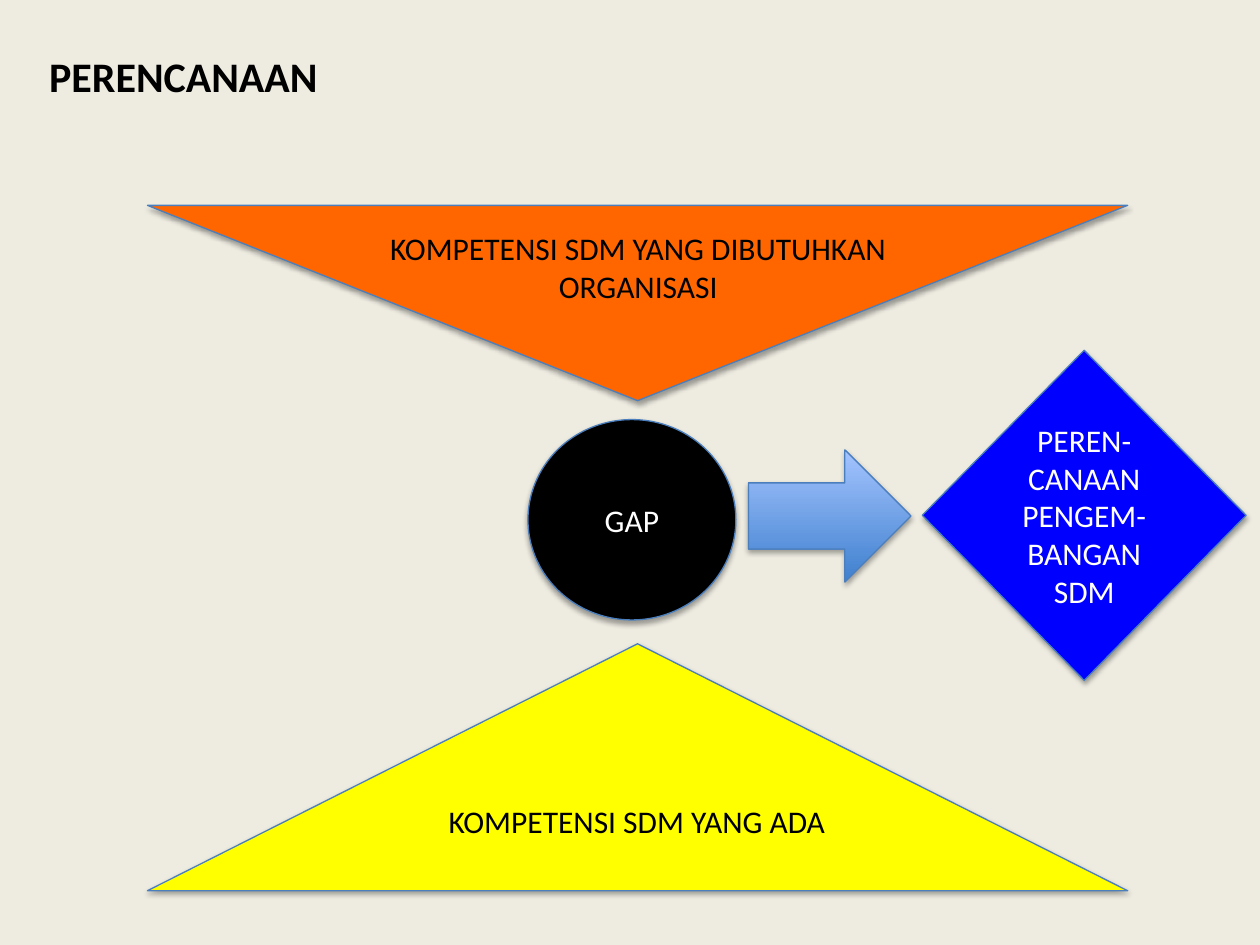
import pptx
import pptx.util
import pptx.dml.color
import pptx.enum.shapes
import pptx.enum.text
import pptx.oxml
import pptx.oxml.ns

Inches, Pt = pptx.util.Inches, pptx.util.Pt
MSO = pptx.enum.shapes.MSO_SHAPE
ALIGN = pptx.enum.text.PP_ALIGN
ANCHOR = pptx.enum.text.MSO_ANCHOR
rgb = pptx.dml.color.RGBColor.from_string

SHADOW = (
    f'<a:effectLst {pptx.oxml.ns.nsdecls("a")}>'
    f'<a:outerShdw blurRad="{Pt(3.1)}" dist="{Pt(1.8)}" dir="5400000" rotWithShape="0">'
    '<a:srgbClr val="000000"><a:alpha val="35000"/></a:srgbClr>'
    '</a:outerShdw></a:effectLst>'
)


def write(sp, text, size=18, color="000000", bold=False, align=ALIGN.CENTER, anchor=ANCHOR.TOP):
    tf = sp.text_frame
    tf.word_wrap = True
    tf.vertical_anchor = anchor
    p = tf.paragraphs[0]
    p.alignment = align
    r = p.add_run()
    r.text = text
    r.font.name = "Calibri"
    r.font.size = Pt(size)
    r.font.bold = bold
    r.font.color.rgb = rgb(color)


def add_figure(kind, box, fill=None):
    sp = s.shapes.add_shape(kind, *map(Inches, box))
    if fill:
        sp.fill.solid()
        sp.fill.fore_color.rgb = rgb(fill)
    sp.line.color.rgb = rgb("4B7EBC")
    sp.line.width = Pt(0.75)
    sp._element.spPr.append(pptx.oxml.parse_xml(SHADOW))
    return sp


prs = pptx.Presentation()
prs.slide_width, prs.slide_height = Inches(10), Inches(7.5)
s = prs.slides.add_slide(prs.slide_layouts[5])
s.background.fill.solid()
s.background.fill.fore_color.rgb = rgb("EEECE1")

# Title
title = s.shapes.title
title.left, title.top, title.width, title.height = map(Inches, (0.29, 0.35, 9.44, 0.5))
write(title, "PERENCANAAN", size=24, bold=True, align=ALIGN.LEFT)

# Gap between the two triangles
gap = add_figure(MSO.OVAL, (4.19, 3.33, 1.65, 1.59), "000000")
write(gap, "GAP", color="FFFFFF", anchor=ANCHOR.MIDDLE)

# Available and required competence
add_figure(MSO.ISOSCELES_TRIANGLE, (1.17, 5.11, 7.78, 1.96), "FFFF00")
required = add_figure(MSO.ISOSCELES_TRIANGLE, (1.17, 1.63, 7.78, 1.55), "FF6600")
required.rotation = 180

# Triangle labels
for text, box in (
    ("KOMPETENSI SDM YANG DIBUTUHKAN ORGANISASI", (2.59, 1.77, 4.95, 0.71)),
    ("KOMPETENSI SDM YANG ADA", (2.44, 6.32, 5.23, 0.4)),
):
    write(s.shapes.add_textbox(*map(Inches, box)), text)

# Arrow from the gap to the plan
arrow = add_figure(MSO.RIGHT_ARROW, (5.94, 3.57, 1.29, 1.05))
arrow.fill.gradient()
arrow.fill.gradient_angle = 90
for stop, position, color in zip(arrow.fill.gradient_stops, (0, 1), ("3F80CE", "A4C4FF")):
    stop.position = position
    stop.color.rgb = rgb(color)

# Development plan
plan = add_figure(MSO.DIAMOND, (7.32, 2.78, 2.57, 2.62), "0000FF")
write(plan, "PEREN-CANAAN PENGEM-BANGAN SDM", color="FFFFFF", anchor=ANCHOR.MIDDLE)

prs.save("out.pptx")
